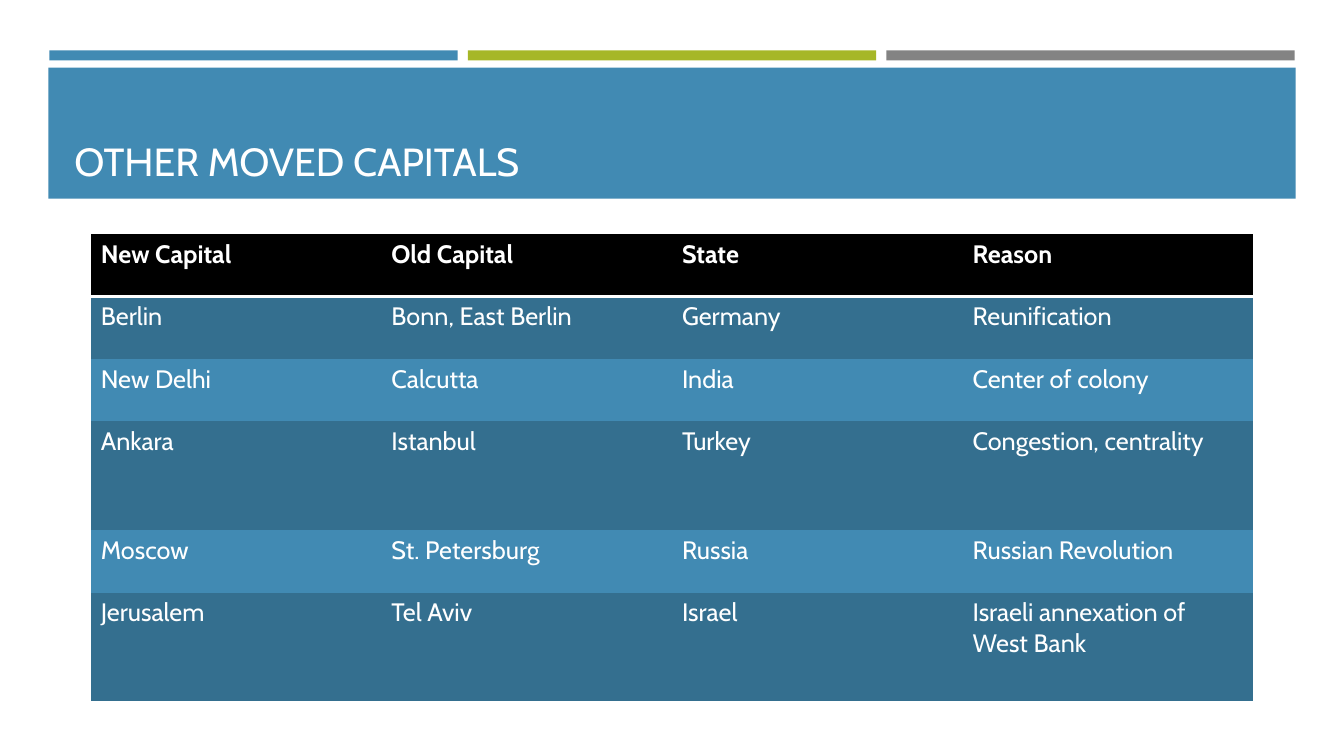
"""Build a slide with a table of capitals that were moved."""
from pptx import Presentation
from pptx import util as u
from pptx.dml.color import RGBColor
from pptx.enum import shapes, text
from pptx.oxml import parse_xml
from pptx.oxml.ns import nsdecls, qn

THEME = {
    "font": "Cabin", "title": 28, "body": 18,
    "white": "FFFFFF", "black": "000000", "blue": "418AB3",
    "dark": "346F8F", "green": "A6B727", "gray": "838383",
}
PX = u.Inches(1) // 100
NO_GRID = "{2D5ABB26-0587-4C30-8999-92F81FD0307C}"


def paint(fill, color):
    fill.solid()
    fill.fore_color.rgb = RGBColor.from_string(THEME[color])


def write(frame, words, size, bold=False):
    span = frame.paragraphs[0].add_run()
    span.text = words
    paint(span.font.fill, "white")
    looks = {"name": THEME["font"], "size": u.Pt(THEME[size]), "bold": bold}
    for name, value in looks.items():
        setattr(span.font, name, value)


deck = Presentation()
deck.slide_width, deck.slide_height = 1333 * PX, 750 * PX
page = deck.slides.add_slide(deck.slide_layouts[6])

bars = [(49 + 415 * i, 50, 405, 10, color)
        for i, color in enumerate(("blue", "green", "gray"))]
bars.append((48, 67, 1237, 130, "blue"))
for *place, color in bars:
    bar = page.shapes.add_shape(shapes.MSO_SHAPE.RECTANGLE, *(n * PX for n in place))
    bar.shadow.inherit = False
    bar.line.fill.background()
    paint(bar.fill, color)

title = page.shapes.add_textbox(64 * PX, 77 * PX, 1206 * PX, 111 * PX).text_frame
title.word_wrap = True
title.vertical_anchor = text.MSO_ANCHOR.BOTTOM
write(title, "OTHER MOVED CAPITALS", "title")

capitals = [
    ("New Capital", "Old Capital", "State", "Reason"),
    ("Berlin", "Bonn, East Berlin", "Germany", "Reunification"),
    ("New Delhi", "Calcutta", "India", "Center of colony"),
    ("Ankara", "Istanbul", "Turkey", "Congestion, centrality"),
    ("Moscow", "St. Petersburg", "Russia", "Russian Revolution"),
    ("Jerusalem", "Tel Aviv", "Israel", "Israeli annexation of West Bank"),
]
heights = [62, 62, 62, 108, 62, 108]
holder = page.shapes.add_table(len(capitals), len(capitals[0]), 90 * PX, 232 * PX,
                               1153 * PX, sum(heights) * PX)
next(holder.element.iter(qn("a:tableStyleId"))).text = NO_GRID
table = holder.table
for r, (words, height) in enumerate(zip(capitals, heights)):
    table.rows[r].height = height * PX
    color = "black" if r == 0 else "dark" if r % 2 else "blue"
    for c, word in enumerate(words):
        cell = table.cell(r, c)
        paint(cell.fill, color)
        write(cell.text_frame, word, "body", bold=r == 0)

header = next(holder.element.iter(qn("a:tr")))
for edges in header.iter(qn("a:tcPr")):
    edges.insert(0, parse_xml(
        f'<a:lnB {nsdecls("a")} w="{u.Pt(2)}"><a:solidFill>'
        f'<a:srgbClr val="{THEME["white"]}"/></a:solidFill></a:lnB>'))

deck.save("out.pptx")
